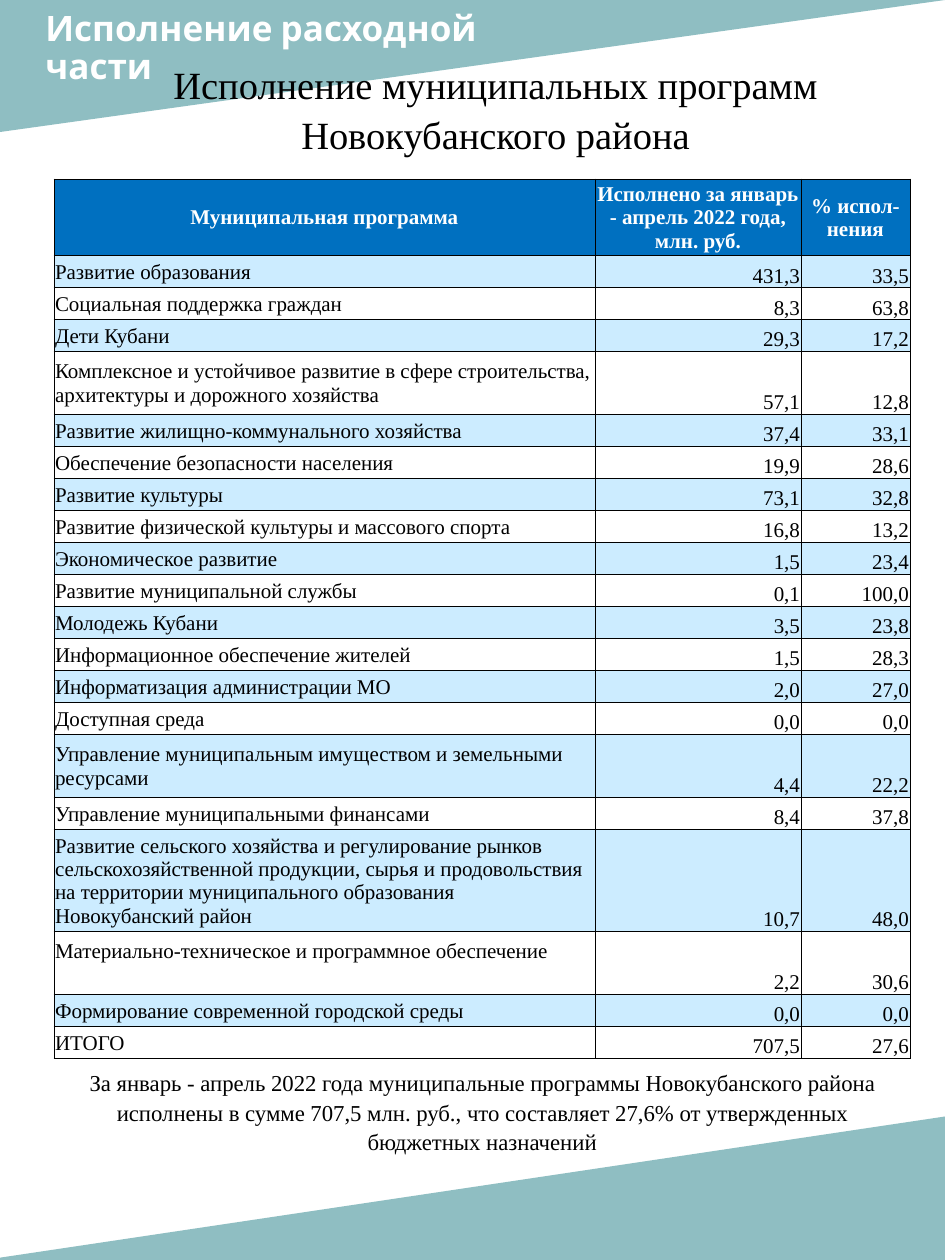
import lxml.etree
import pptx
import pptx.dml.color
import pptx.enum.shapes
import pptx.enum.text
import pptx.oxml.ns
import pptx.util

EMU_PER_PX = 914400 / 126
ALIGN = pptx.enum.text.PP_ALIGN
ANCHOR = pptx.enum.text.MSO_ANCHOR

PROGRAMS = [
    ("Развитие образования", "431,3", "33,5", 32),
    ("Социальная поддержка граждан", "8,3", "63,8", 32),
    ("Дети Кубани", "29,3", "17,2", 32),
    ("Комплексное и устойчивое развитие в сфере строительства, архитектуры и дорожного хозяйства",
     "57,1", "12,8", 63),
    ("Развитие жилищно-коммунального хозяйства", "37,4", "33,1", 32),
    ("Обеспечение безопасности населения", "19,9", "28,6", 32),
    ("Развитие культуры", "73,1", "32,8", 32),
    ("Развитие физической культуры и массового спорта", "16,8", "13,2", 32),
    ("Экономическое развитие", "1,5", "23,4", 32),
    ("Развитие муниципальной службы", "0,1", "100,0", 32),
    ("Молодежь Кубани", "3,5", "23,8", 32),
    ("Информационное обеспечение жителей", "1,5", "28,3", 32),
    ("Информатизация администрации МО", "2,0", "27,0", 32),
    ("Доступная среда", "0,0", "0,0", 32),
    ("Управление муниципальным имуществом и земельными ресурсами", "4,4", "22,2", 63),
    ("Управление муниципальными финансами", "8,4", "37,8", 32),
    ("Развитие сельского хозяйства и регулирование рынков сельскохозяйственной продукции, "
     "сырья и продовольствия на территории муниципального образования Новокубанский район",
     "10,7", "48,0", 102),
    ("Материально-техническое и программное обеспечение", "2,2", "30,6", 63),
    ("Формирование современной городской среды", "0,0", "0,0", 32),
    ("ИТОГО", "707,5", "27,6", 32),
]
HEADINGS = ("Муниципальная программа", "Исполнено за январь - апрель 2022 года, млн. руб.",
            "% испол-нения", 76)


def px(length):
    return pptx.util.Emu(round(length * EMU_PER_PX))


def rgb(color):
    return pptx.dml.color.RGBColor.from_string(color)


def add_child(parent, tag, **attributes):
    return lxml.etree.SubElement(parent, pptx.oxml.ns.qn(tag), attributes)


class ReportSlide:
    serif = "Times New Roman"
    sans = "Cabin"
    black = "000000"
    white = "FFFFFF"
    accent = "519AA0"
    header_fill = "0070C0"
    band_fills = ("CCECFF", "FFFFFF")

    def __init__(self, presentation):
        self.slide = presentation.slides.add_slide(presentation.slide_layouts[6])

    def style(self, paragraph, size, font, color, bold=False, align=ALIGN.LEFT):
        paragraph.alignment = align
        paragraph.font.size = pptx.util.Pt(size)
        paragraph.font.name = font
        paragraph.font.bold = bold
        paragraph.font.color.rgb = rgb(color)

    def corner(self, left, top, width, height, flip):
        shape = self.slide.shapes.add_shape(
            pptx.enum.shapes.MSO_SHAPE.RIGHT_TRIANGLE, px(left), px(top), px(width), px(height))
        shape.shadow.inherit = False
        shape.rotation = 180
        shape.fill.solid()
        shape.fill.fore_color.rgb = rgb(self.accent)
        shape.line.fill.background()
        properties = shape.element.spPr
        properties.find(pptx.oxml.ns.qn("a:xfrm")).set(flip, "1")
        add_child(next(properties.iter(pptx.oxml.ns.qn("a:srgbClr"))), "a:alpha", val="64000")

    def text(self, left, top, width, height, text, spacing, **style):
        box = self.slide.shapes.add_textbox(px(left), px(top), px(width), px(height))
        box.text_frame.word_wrap = True
        box.text_frame.text = text
        for paragraph in box.text_frame.paragraphs:
            paragraph.line_spacing = spacing
            self.style(paragraph, **style)

    def cell(self, cell, text, fill, anchor, **style):
        cell.margin_left = cell.margin_right = cell.margin_top = px(1)
        cell.margin_bottom = 0
        cell.vertical_anchor = anchor
        cell.text = text
        self.style(cell.text_frame.paragraphs[0], size=12, font=self.serif, **style)
        properties = cell._tc.get_or_add_tcPr()
        for side in ("a:lnL", "a:lnR", "a:lnT", "a:lnB"):
            border = add_child(properties, side, w=str(pptx.util.Pt(0.5)))
            add_child(add_child(border, "a:solidFill"), "a:srgbClr", val=self.black)
        cell.fill.solid()
        cell.fill.fore_color.rgb = rgb(fill)

    def table(self, left, top, column_widths, headings, records):
        rows = [headings, *records]
        table = self.slide.shapes.add_table(
            len(rows), len(column_widths), px(left), px(top),
            px(sum(column_widths)), px(sum(row[-1] for row in rows))).table
        for column, width in zip(table.columns, column_widths):
            column.width = px(width)
        for index, (*texts, height) in enumerate(rows):
            table.rows[index].height = px(height)
            for position, text in enumerate(texts):
                cell = table.cell(index, position)
                if index == 0:
                    self.cell(cell, text, self.header_fill, ANCHOR.MIDDLE,
                              color=self.white, bold=True, align=ALIGN.CENTER)
                else:
                    self.cell(cell, text, self.band_fills[(index - 1) % 2],
                              ANCHOR.BOTTOM if position else ANCHOR.MIDDLE,
                              color=self.black, align=ALIGN.RIGHT if position else ALIGN.LEFT)
        return table


def main():
    presentation = pptx.Presentation()
    presentation.slide_width = px(945)
    presentation.slide_height = px(1260)
    report = ReportSlide(presentation)
    report.corner(0, 0, 945, 132, "flipH")
    report.corner(-16, 1116, 964, 144, "flipV")
    report.text(33, 5, 614, 97, "Исполнение расходной\nчасти", 0.9,
                size=20, font=report.sans, color=report.white, bold=True)
    report.text(81, 52, 829, 105, "Исполнение муниципальных программ Новокубанского района", 1.07,
                size=22, font=report.serif, color=report.black, align=ALIGN.CENTER)
    report.text(54, 1061, 856, 96,
                "За январь - апрель 2022 года муниципальные программы Новокубанского района "
                "исполнены в сумме 707,5 млн. руб., что составляет 27,6% от утвержденных "
                "бюджетных назначений", 1.07,
                size=13, font=report.serif, color=report.black, align=ALIGN.CENTER)
    table = report.table(54, 179, (541, 206, 109), HEADINGS, PROGRAMS)
    table.cell(18, 0).margin_bottom = px(24)
    presentation.save("out.pptx")


if __name__ == "__main__":
    main()
